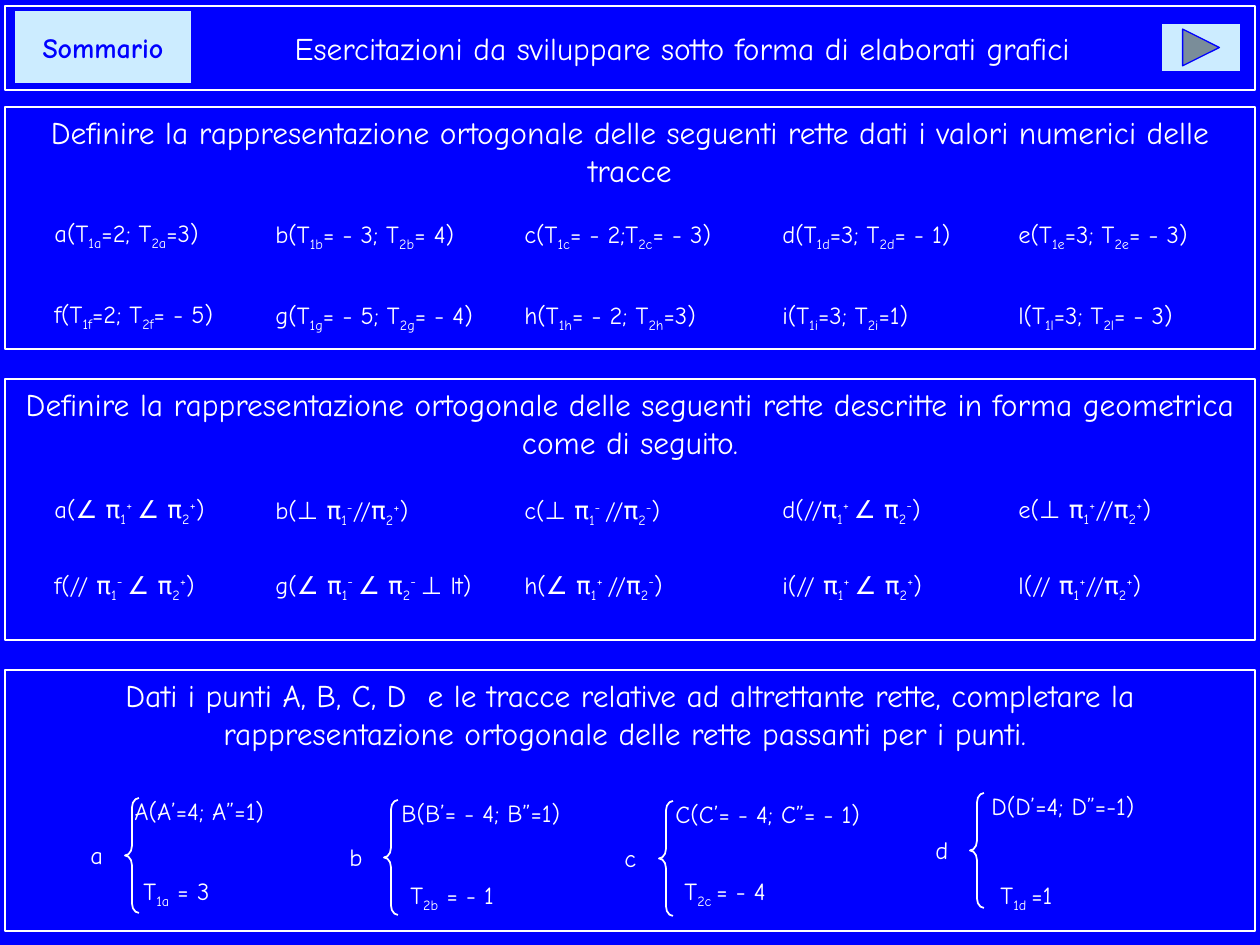
from pptx import Presentation
from pptx import util as u
from pptx.dml.color import RGBColor
from pptx.enum import shapes, text

COLORS = {"ground": "0000FF", "ink": "FFFFFF", "button": "CCECFF"}
BASELINES = {"_": "-25000", "^": "30000"}
PRESET = shapes.MSO_SHAPE


def px(n):
    return u.Emu(round(n * 914400 / 126))


def color(name):
    return RGBColor.from_string(COLORS[name])


class Board:
    font = "Comic Neue"

    def __init__(self, slide):
        self.slide = slide
        slide.background.fill.solid()
        slide.background.fill.fore_color.rgb = color("ground")

    def style(self, font, size, ink="ink", bold=False):
        font.name, font.size, font.bold = self.font, u.Pt(size), bold
        font.color.rgb = color(ink)

    def shape(self, kind, x, y, w, h, line="ink", width=1, fill=None):
        shape = self.slide.shapes.add_shape(kind, px(x), px(y), px(w), px(h))
        shape.shadow.inherit = False
        shape.line.color.rgb = color(line)
        shape.line.width = u.Pt(width)
        if fill:
            shape.fill.solid()
            shape.fill.fore_color.rgb = color(fill)
        else:
            shape.fill.background()
        return shape

    def caption(self, shape, words, size=18, ink="ink", bold=False,
                anchor=text.MSO_ANCHOR.MIDDLE):
        frame = shape.text_frame
        frame.word_wrap = True
        frame.vertical_anchor = anchor
        paragraph = frame.paragraphs[0]
        paragraph.text = words
        paragraph.alignment = text.PP_ALIGN.CENTER
        self.style(paragraph.font, size, ink, bold)

    def button(self, kind, x, y, w, h):
        return self.shape(kind, x, y, w, h, "ground", 0, "button")

    def panel(self, y, h, words):
        self.caption(self.shape(PRESET.RECTANGLE, 5, y, 1250, h), words,
                     anchor=text.MSO_ANCHOR.TOP)

    def formula(self, x, y, w, words):
        """_..._ is subscript, ^...^ superscript; a closing space is 16 pt."""
        tall = words.endswith(" ")
        box = self.slide.shapes.add_textbox(px(x), px(y), px(w), px(46 if tall else 42))
        box.text_frame.word_wrap = True
        paragraph = box.text_frame.paragraphs[0]
        self.style(paragraph.font, 14)
        mark, part = None, ""

        def flush():
            if part:
                run = paragraph.add_run()
                run.text = part
                if mark:
                    run.font._element.set("baseline", BASELINES[mark])

        for char in words.rstrip():
            if char in BASELINES:
                flush()
                mark, part = (None if mark else char), ""
            else:
                part += char
        flush()
        if tall:
            run = paragraph.add_run()
            run.text = " "
            run.font.size = u.Pt(16)

    def formula_row(self, y, items):
        for x, (words, w) in zip(COLUMNS, items):
            self.formula(x, y - 5 if words.endswith(" ") else y, w, words)

    def system(self, x, y, name, point_x, point, trace):
        brace = self.shape(PRESET.LEFT_BRACE, x, y, 14, 115)
        brace.adjustments[0] = 0.685
        self.formula(x - 47, y + 36, 37, name)
        self.formula(point_x, y - 12, 210, point)
        self.formula(point_x + 9, 870, 130, trace)


COLUMNS = (42, 263, 512, 770, 1006)

TRACE_ROWS = {
    213: [("a(T_1a_=2; T_2a_=3) ", 208), ("b(T_1b_= - 3; T_2b_= 4)", 229),
          ("c(T_1c_= - 2;T_2c_= - 3)", 239), ("d(T_1d_=3; T_2d_= - 1)", 224),
          ("e(T_1e_=3; T_2e_= - 3)", 227)],
    294: [("f(T_1f_=2; T_2f_= - 5) ", 228), ("g(T_1g_= - 5; T_2g_= - 4)", 260),
          ("h(T_1h_= - 2; T_2h_=3)", 239), ("i(T_1i_=3; T_2i_=1)", 224),
          ("l(T_1l_=3; T_2l_= - 3)", 227)],
}
GEOMETRY_ROWS = {
    489: [("a(∠ π_1_^+ ^∠ π_2_^+^) ", 175), ("b(⊥ π_1_^-^//π_2_^+^)", 166),
          ("c(⊥ π_1_^- ^//π_2_^-^)", 190), ("d(//π_1_^+ ^∠ π_2_^-^) ", 184),
          ("e(⊥ π_1_^+^//π_2_^+^) ", 204)],
    565: [("f(// π_1_^- ^∠ π_2_^+^) ", 181), ("g(∠ π_1_^- ^∠ π_2_^- ^⊥ lt) ", 227),
          ("h(∠ π_1_^+ ^//π_2_^-^) ", 186), ("i(// π_1_^+ ^∠ π_2_^+^) ", 175),
          ("l(// π_1_^+^//π_2_^+^) ", 185)],
}
SYSTEMS = [
    (125, 798, "a", 122, "A(A’=4; A”=1) ", "T_1a_ = 3"),
    (384, 800, "b", 389, "B(B’= - 4; B”=1) ", "T_2b_ = - 1 "),
    (659, 801, "c", 663, "C(C’= - 4; C”= - 1) ", "T_2c _= - 4"),
    (970, 793, "d", 979, "D(D’=4; D”=-1) ", "T_1d _=1 "),
]


def main():
    deck = Presentation()
    deck.slide_width, deck.slide_height = px(1260), px(945)
    board = Board(deck.slides.add_slide(deck.slide_layouts[6]))

    # Header with its navigation buttons
    summary = board.button(PRESET.ACTION_BUTTON_CUSTOM, 14, 10, 178, 74)
    board.caption(summary, "Sommario", 16, "ground", True)
    header = board.shape(PRESET.RECTANGLE, 5, 6, 1250, 84, width=0.75)
    board.caption(header, "Esercitazioni da sviluppare sotto forma di elaborati grafici")
    header.text_frame.margin_left = px(117)
    board.button(PRESET.ACTION_BUTTON_FORWARD_OR_NEXT, 1161, 23, 80, 49)

    # Lines given by their traces
    board.panel(107, 242, "Definire la rappresentazione ortogonale delle seguenti rette "
                          "dati i valori numerici delle tracce")
    for y, items in TRACE_ROWS.items():
        board.formula_row(y, items)

    # Lines described geometrically
    board.panel(379, 261, "Definire la rappresentazione ortogonale delle seguenti rette "
                          "descritte in forma geometrica come di seguito.")
    for y, items in GEOMETRY_ROWS.items():
        board.formula_row(y, items)

    # Lines through given points
    board.panel(670, 261, "Dati i punti A, B, C, D  e le tracce relative ad altrettante rette, "
                          "completare la rappresentazione ortogonale delle rette passanti "
                          "per i punti. ")
    for system in SYSTEMS:
        board.system(*system)

    deck.save("out.pptx")


if __name__ == "__main__":
    main()
